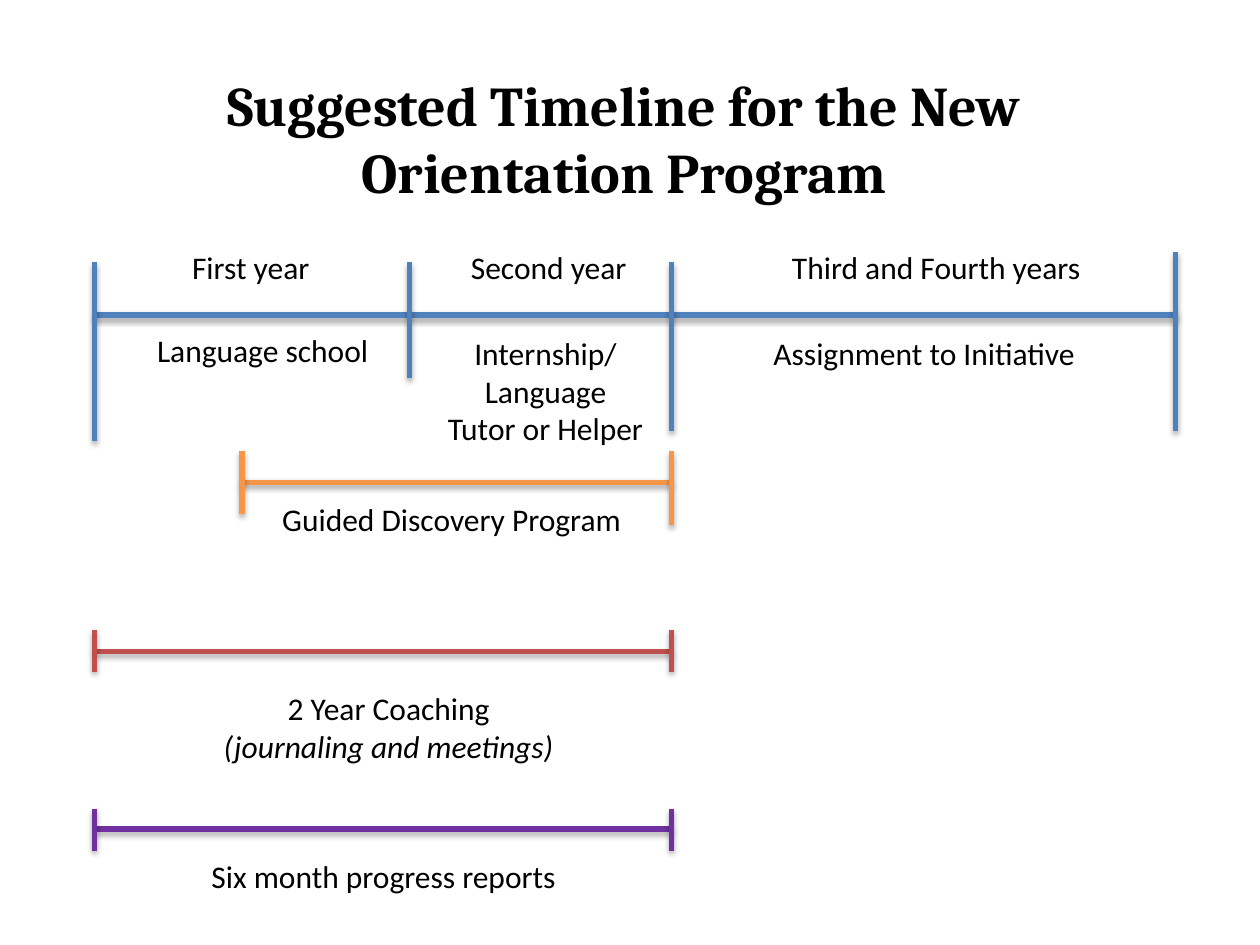
from lxml.etree import SubElement
from pptx import Presentation
from pptx.dml.color import RGBColor
from pptx.enum.shapes import MSO_CONNECTOR
from pptx.enum.text import MSO_ANCHOR, MSO_AUTO_SIZE, PP_ALIGN
from pptx.oxml.ns import qn
from pptx.util import Inches, Pt


def color(hex_string):
    return RGBColor.from_string(hex_string)


def add_line(x1, y1, x2, y2, line_color):
    line = slide.shapes.add_connector(
        MSO_CONNECTOR.STRAIGHT, Inches(x1), Inches(y1), Inches(x2), Inches(y2))
    line.line.color.rgb = color(line_color)
    line.line.width = Pt(3)
    effects = SubElement(line._element.spPr, qn("a:effectLst"))
    shadow = SubElement(effects, qn("a:outerShdw"), blurRad="40000",
                        dist="23000", dir="5400000", rotWithShape="0")
    black = SubElement(shadow, qn("a:srgbClr"), val="000000")
    SubElement(black, qn("a:alpha"), val="35000")


prs = Presentation()
prs.slide_width, prs.slide_height = Inches(10), Inches(7.5)
slide = prs.slides.add_slide(prs.slide_layouts[5])

title = slide.shapes.title
title.left, title.top = Inches(0.58), Inches(0.5)
title.width, title.height = Inches(8.75), Inches(1.18)
title.text_frame.text = "Suggested Timeline for the New Orientation Program"
title.text_frame.auto_size = MSO_AUTO_SIZE.NONE
heading = title.text_frame.paragraphs[0]
heading.alignment = PP_ALIGN.CENTER
heading.font.name = "Cambria"
heading.font.size = Pt(32)
heading.font.bold = True
heading.font.color.rgb = color("000000")

start, discovery_start, year_one_end, year_two_end, finish = 0.75, 1.92, 3.25, 5.33, 9.33
spans = [
    ("4F81BD", 2.5, [(start, 2.08, 3.5), (year_one_end, 2.08, 3),
                     (year_two_end, 2.08, 3.42), (finish, 2, 3.42)]),
    ("F79646", 3.83, [(discovery_start, 3.58, 4.08), (year_two_end, 3.58, 4.17)]),
    ("C0504D", 5.17, [(start, 5, 5.33), (year_two_end, 5, 5.33)]),
    ("7030A0", 6.58, [(start, 6.42, 6.75), (year_two_end, 6.42, 6.75)]),
]
for span_color, y, ticks in spans:
    add_line(ticks[0][0], y, ticks[-1][0], y, span_color)
    for x, top, bottom in ticks:
        add_line(x, top, x, bottom, span_color)

labels = [
    (1.42, 1.92, 1.14, 0.4, ["First year"]),
    (3.6, 1.92, 1.51, 0.4, ["Second year"]),
    (6.17, 1.92, 2.52, 0.4, ["Third and Fourth years"]),
    (-0.08, 2.58, 4.33, 0.4, ["Language school"]),
    (3.08, 2.6, 2.5, 1.01, ["Internship/", "Language", "Tutor or Helper"]),
    (5.17, 2.6, 4.33, 0.4, ["Assignment to Initiative"]),
    (1.42, 3.92, 4.33, 0.71, ["Guided Discovery Program"]),
    (0, 5.42, 6.17, 0.71, ["2 Year Coaching", "(journaling and meetings)"]),
    (0.88, 6.75, 4.33, 0.42, ["Six month progress reports"]),
]
for left, top, width, height, lines in labels:
    label = slide.shapes.add_textbox(
        Inches(left), Inches(top), Inches(width), Inches(height))
    frame = label.text_frame
    frame.word_wrap = False
    frame.vertical_anchor = MSO_ANCHOR.TOP
    frame.text = "\n".join(lines)
    for paragraph in frame.paragraphs:
        paragraph.alignment = PP_ALIGN.CENTER
        paragraph.font.name = "Calibri"
        paragraph.font.size = Pt(18)
        paragraph.font.color.rgb = color("000000")
        if paragraph.text.startswith("("):
            paragraph.font.italic = True

prs.save("out.pptx")
